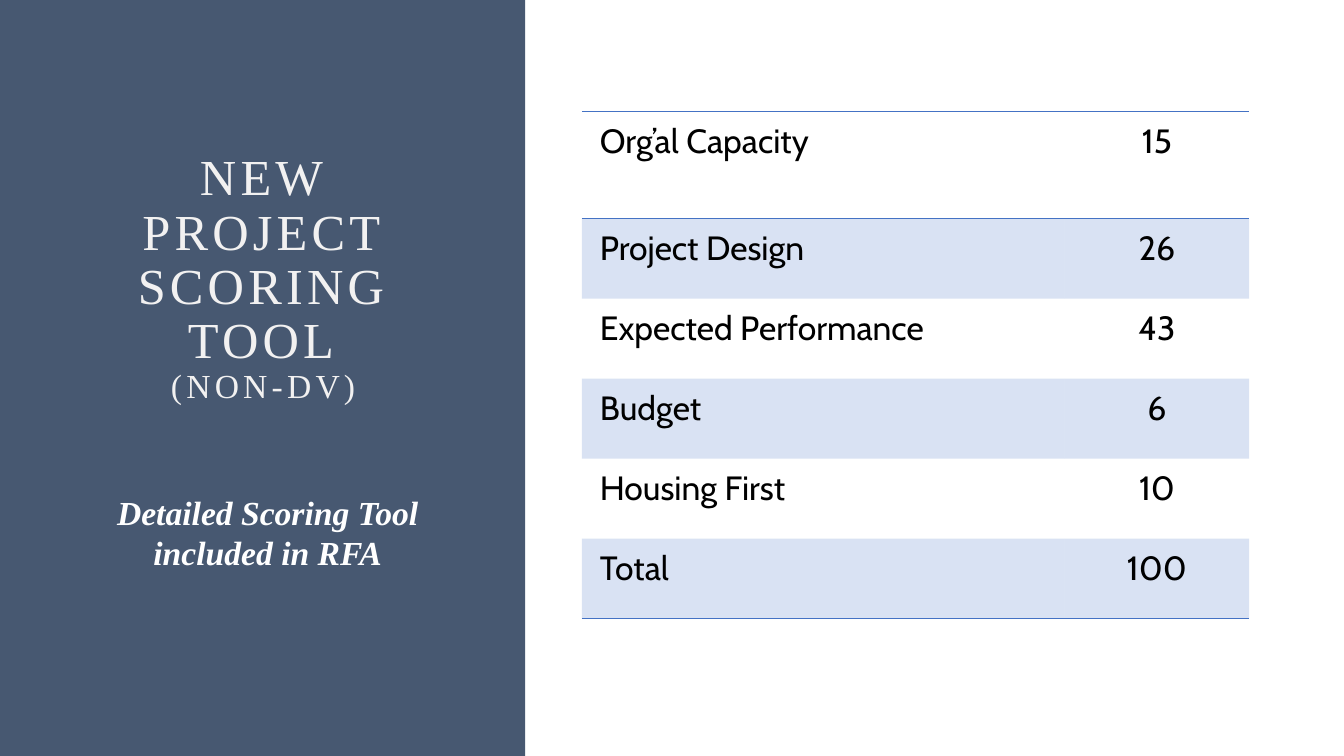
from dataclasses import dataclass

from lxml.etree import SubElement
from pptx import Presentation
from pptx.dml.color import RGBColor
from pptx.enum.shapes import MSO_SHAPE
from pptx.enum.text import MSO_ANCHOR, MSO_AUTO_SIZE, PP_ALIGN
from pptx.oxml.ns import qn
from pptx.util import Inches, Pt


@dataclass(frozen=True)
class Theme:
    panel: str = "475871"
    title: str = "F2F1F1"
    note: str = "FFFFFF"
    ink: str = "000000"
    accent: str = "4472C4"
    serif: str = "Times New Roman"
    sans: str = "Cabin"
    big: int = 36
    base: int = 24


THEME = Theme()
PLAIN = "{2D5ABB26-0587-4C30-8999-92F81FD0307C}"
SCORES = [
    ("Org’al Capacity", "15"),
    ("Project Design", "26"),
    ("Expected Performance", "43"),
    ("Budget", "6"),
    ("Housing First", "10"),
    ("Total", "100"),
]


def place(shape, left, top, width, height):
    shape.left, shape.top = Inches(left), Inches(top)
    shape.width, shape.height = Inches(width), Inches(height)


def add_run(para, text, size, face, color):
    run = para.add_run()
    run.text = text
    run.font.size = Pt(size)
    run.font.name = face
    run.font.color.rgb = RGBColor.from_string(color)
    return run


def add_title(slide, left, top, width, height):
    title = slide.shapes.title
    place(title, left, top, width, height)
    frame = title.text_frame
    frame.word_wrap = True
    frame.auto_size = MSO_AUTO_SIZE.NONE
    frame.vertical_anchor = MSO_ANCHOR.BOTTOM
    para = frame.paragraphs[0]
    para.alignment = PP_ALIGN.CENTER
    para.line_spacing = 0.9
    name = add_run(para, "NEW PROJECT SCORING TOOL", THEME.big, THEME.serif, THEME.title)
    para.add_line_break()
    kind = add_run(para, "(NON-DV)", THEME.base, THEME.serif, THEME.title)
    for run in (name, kind):
        run.font._element.set("spc", "300")


def add_note(slide, left, top, width, height):
    box = slide.shapes.add_textbox(*map(Inches, (left, top, width, height)))
    box.text_frame.word_wrap = True
    para = box.text_frame.paragraphs[0]
    para.alignment = PP_ALIGN.CENTER
    para.space_before = Pt(10)
    run = add_run(para, "Detailed Scoring Tool included in RFA",
                  THEME.base, THEME.serif, THEME.note)
    run.font.bold = run.font.italic = True


def add_panel(slide, left, top, width, height):
    """Draw the dark side panel with the title and the note on it."""
    panel = slide.shapes.add_shape(
        MSO_SHAPE.RECTANGLE, *map(Inches, (left, top, width, height)))
    panel.shadow.inherit = False
    panel.fill.solid()
    panel.fill.fore_color.rgb = RGBColor.from_string(THEME.panel)
    panel.line.fill.background()
    slide.shapes.title.element.addprevious(panel.element)
    add_title(slide, left + 0.94, top + 0.75, 3.34, 3.33)
    add_note(slide, left + 1.02, top + 4.83, 3.27, 2.25)


def add_rule(cell, side):
    line = SubElement(cell._tc.get_or_add_tcPr(), qn(f"a:ln{side}"), w=str(Pt(1)))
    fill = SubElement(line, qn("a:solidFill"))
    SubElement(fill, qn("a:srgbClr"), val=THEME.accent)


def tint(cell):
    """Fill the cell with the accent colour at 20 % opacity."""
    cell.fill.solid()
    cell.fill.fore_color.rgb = RGBColor.from_string(THEME.accent)
    color = cell._tc.tcPr.find(f".//{qn('a:solidFill')}/{qn('a:srgbClr')}[last()]")
    for color in cell._tc.tcPr.findall(f"{qn('a:solidFill')}/{qn('a:srgbClr')}"):
        SubElement(color, qn("a:alpha"), val="20000")


def fill_cell(cell, text, align):
    cell.margin_left = cell.margin_right = Inches(0.18)
    cell.margin_top = cell.margin_bottom = Inches(0.09)
    para = cell.text_frame.paragraphs[0]
    para.alignment = align
    add_run(para, text, THEME.base, THEME.sans, THEME.ink)


def add_scores(slide, left, top, width, height):
    """Draw the score table; the first row is taller than the others."""
    table = slide.shapes.add_table(
        len(SCORES), 2, *map(Inches, (left, top, width, height))).table
    table._tbl.tblPr.find(qn("a:tableStyleId")).text = PLAIN
    table.columns[0].width = Inches(4.79)
    table.columns[1].width = Inches(width - 4.79)
    first, last = 0, len(SCORES) - 1
    head = 1.06
    for i, pair in enumerate(SCORES):
        table.rows[i].height = Inches(head if i == first else (height - head) / last)
        for j, text in enumerate(pair):
            cell = table.cell(i, j)
            fill_cell(cell, text, PP_ALIGN.CENTER if j else PP_ALIGN.LEFT)
            if i == first:
                add_rule(cell, "T")
            if i in (first, last):
                add_rule(cell, "B")
            if i % 2:
                tint(cell)
            else:
                cell.fill.background()


def main():
    deck = Presentation()
    deck.slide_width, deck.slide_height = Inches(13.33), Inches(7.5)
    slide = deck.slides.add_slide(deck.slide_layouts[5])
    add_panel(slide, 0, 0, 5.21, 7.5)
    add_scores(slide, 5.77, 1.11, 6.62, 5.03)
    deck.save("out.pptx")


if __name__ == "__main__":
    main()
